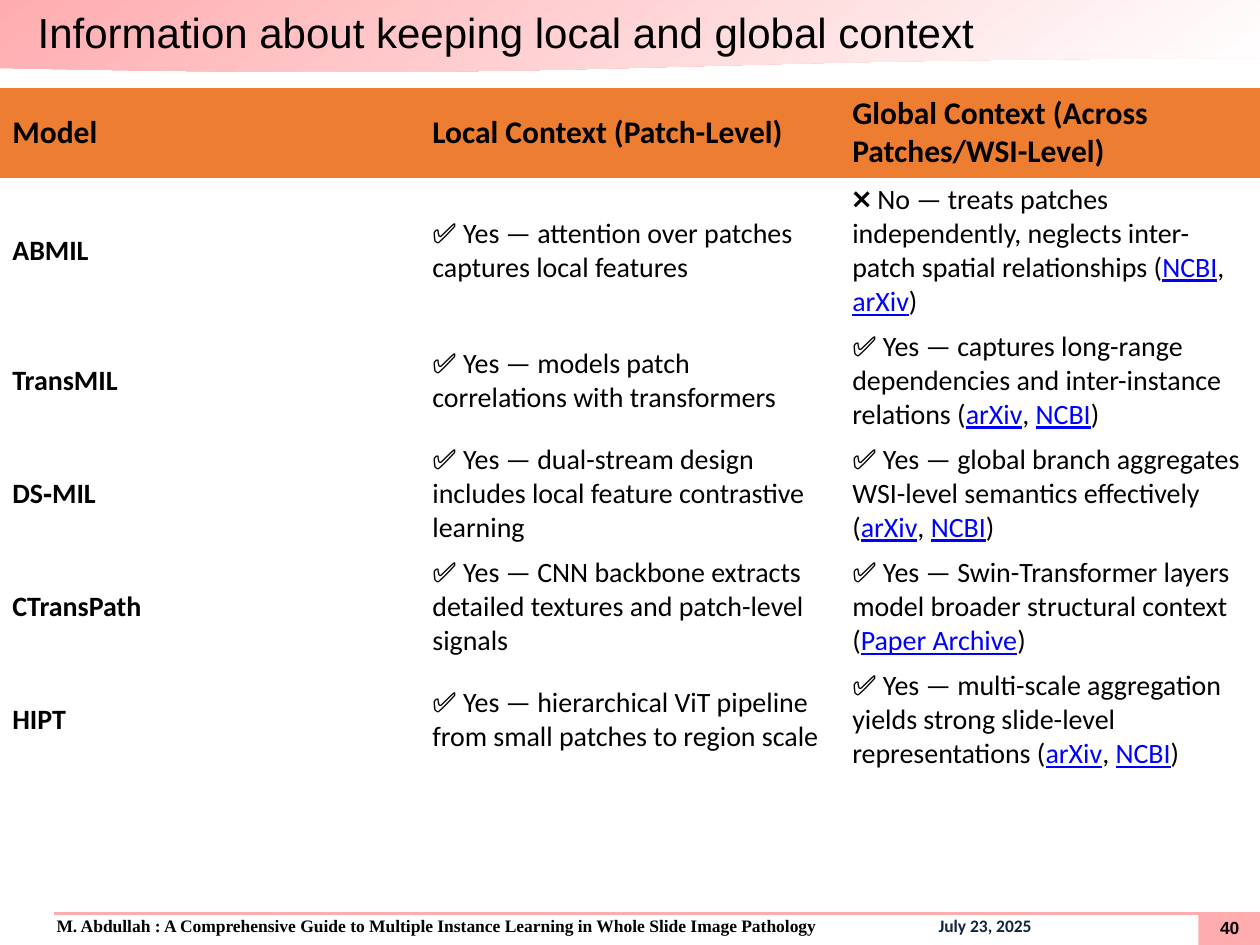
from dataclasses import dataclass

from lxml import etree
from pptx import Presentation
from pptx.dml.color import RGBColor
from pptx.enum.shapes import MSO_CONNECTOR, MSO_SHAPE
from pptx.enum.text import MSO_ANCHOR, MSO_AUTO_SIZE, PP_ALIGN
from pptx.oxml.ns import qn
from pptx.util import Cm, Pt

RECTANGLE = MSO_SHAPE.RECTANGLE
DOCUMENT = MSO_SHAPE.FLOWCHART_DOCUMENT
STRAIGHT = MSO_CONNECTOR.STRAIGHT
MIDDLE, TOP = MSO_ANCHOR.MIDDLE, MSO_ANCHOR.TOP
NO_FIT = MSO_AUTO_SIZE.NONE
LEFT, CENTER = PP_ALIGN.LEFT, PP_ALIGN.CENTER
TITLE_ONLY = 5
PLAIN_TABLE_STYLE = "{2D5ABB26-0587-4C30-8999-92F81FD0307C}"


@dataclass(frozen=True)
class Theme:
    black: str = "000000"
    white: str = "FFFFFF"
    pink: str = "FFACAF"
    orange: str = "ED7D31"
    link: str = "0000FF"
    navy: str = "0F243E"
    heading: str = "Arial"
    body: str = "Calibri"
    serif: str = "Times New Roman"
    title_size: int = 24
    header_size: int = 18
    cell_size: int = 16
    footer_size: int = 10


THEME = Theme()

TITLE = "Information about keeping local and global context"
AUTHOR_LINE = ("M. Abdullah : A Comprehensive Guide to Multiple Instance Learning "
               "in Whole Slide Image Pathology")
DATE = "July 23, 2025"
PAGE = "40"

HEADERS = ["Model", "Local Context (Patch-Level)",
           "Global Context (Across Patches/WSI-Level)"]
# Model, local context, global context, cited sources
MODELS = [
    ("ABMIL", "✅ Yes — attention over patches captures local features",
     "❌ No — treats patches independently, neglects inter-patch spatial relationships",
     ["NCBI", "arXiv"]),
    ("TransMIL", "✅ Yes — models patch correlations with transformers",
     "✅ Yes — captures long-range dependencies and inter-instance relations",
     ["arXiv", "NCBI"]),
    ("DS‑MIL", "✅ Yes — dual-stream design includes local feature contrastive learning",
     "✅ Yes — global branch aggregates WSI-level semantics effectively",
     ["arXiv", "NCBI"]),
    ("CTransPath", "✅ Yes — CNN backbone extracts detailed textures and patch-level signals",
     "✅ Yes — Swin-Transformer layers model broader structural context",
     ["Paper Archive"]),
    ("HIPT", "✅ Yes — hierarchical ViT pipeline from small patches to region scale",
     "✅ Yes — multi-scale aggregation yields strong slide-level representations",
     ["arXiv", "NCBI"]),
]
ROW_HEIGHTS = [1.8, 2.96] + [2.28] * 4


def set_all(target, values):
    for name, value in values.items():
        setattr(target, name, value)


def add_run(paragraph, text, color, **font_values):
    run = paragraph.add_run()
    run.text = text
    set_all(run.font, font_values)
    run.font.color.rgb = RGBColor.from_string(color)


def add_panel(slide, preset, left, top, width, height):
    panel = slide.shapes.add_shape(preset, Cm(left), Cm(top), Cm(width), Cm(height))
    panel.shadow.inherit = False
    panel.line.fill.background()
    return panel


def add_header(slide, left, top, width, height):
    # Gradient band with a wavy lower edge
    band = add_panel(slide, DOCUMENT, left, top, width, height)
    band.fill.gradient()
    band.fill.gradient_angle = 305
    for stop, color in zip(band.fill.gradient_stops, (THEME.pink, THEME.white)):
        stop.color.rgb = RGBColor.from_string(color)

    # Title, brought in front of the band
    title = slide.shapes.title
    slide.shapes._spTree.append(title._element)
    set_all(title, dict(left=Cm(left), top=Cm(top), width=Cm(width),
                        height=Cm(height - 0.2)))
    set_all(title.text_frame, dict(
        margin_left=Cm(0.76), margin_right=0, margin_top=0, margin_bottom=0,
        word_wrap=False, auto_size=NO_FIT, vertical_anchor=MIDDLE))
    heading = title.text_frame.paragraphs[0]
    heading.alignment = LEFT
    add_run(heading, TITLE, THEME.black, name=THEME.heading,
            size=Pt(THEME.title_size), bold=False)


def format_cell(cell, fill):
    set_all(cell, dict(vertical_anchor=MIDDLE, margin_left=Cm(0.25),
                       margin_right=Cm(0.25), margin_top=Cm(0.1),
                       margin_bottom=Cm(0.1)))
    if fill:
        cell.fill.solid()
        cell.fill.fore_color.rgb = RGBColor.from_string(fill)
    else:
        cell.fill.background()
    return cell.text_frame.paragraphs[0]


def add_sources(paragraph, sources, font):
    add_run(paragraph, " (", THEME.black, **font)
    for index, source in enumerate(sources):
        if index:
            add_run(paragraph, ", ", THEME.black, **font)
        add_run(paragraph, source, THEME.link, underline=True, **font)
    add_run(paragraph, ")", THEME.black, **font)


def add_model_table(slide, left, top, width):
    table = slide.shapes.add_table(
        len(MODELS) + 1, len(HEADERS), Cm(left), Cm(top), Cm(width),
        Cm(sum(ROW_HEIGHTS))).table
    set_all(table, dict(first_row=False, horz_banding=False))
    table._tbl.tblPr.find(qn("a:tableStyleId")).text = PLAIN_TABLE_STYLE
    for column in table.columns:
        column.width = Cm(width / len(HEADERS))
    for row, height in zip(table.rows, ROW_HEIGHTS):
        row.height = Cm(height)

    # Column headings
    for index, header in enumerate(HEADERS):
        paragraph = format_cell(table.cell(0, index), THEME.orange)
        add_run(paragraph, header, THEME.black, name=THEME.body,
                size=Pt(THEME.header_size), bold=True)

    # One row per model; the last cell ends with its sources
    font = dict(name=THEME.body, size=Pt(THEME.cell_size))
    for row, (*texts, sources) in enumerate(MODELS, start=1):
        for column, text in enumerate(texts):
            paragraph = format_cell(table.cell(row, column), None)
            add_run(paragraph, text, THEME.black, bold=column == 0, **font)
        add_sources(paragraph, sources, dict(font, bold=False))


def add_footer_text(slide, left, top, width, height, **frame_values):
    box = slide.shapes.add_textbox(Cm(left), Cm(top), Cm(width), Cm(height))
    set_all(box.text_frame, dict(word_wrap=True, **frame_values))
    return box.text_frame.paragraphs[0]


def add_footer(slide, left, top, width, height):
    # Page number block
    block_width = 1.27
    block_left = left + width - block_width + 0.03
    block = add_panel(slide, RECTANGLE, block_left, top, block_width, height)
    block.fill.solid()
    block.fill.fore_color.rgb = RGBColor.from_string(THEME.pink)

    # Author line and date, parted by a tab
    credit = add_footer_text(slide, left + 0.1, top - 0.03, width - 0.1, height,
                             margin_left=Cm(1.04), vertical_anchor=TOP)
    tabs = etree.SubElement(credit._p.get_or_add_pPr(), qn("a:tabLst"))
    etree.SubElement(tabs, qn("a:tab"), pos=str(Cm(17.78)), algn="l")
    credit.line_spacing = 0.95
    font = dict(size=Pt(THEME.footer_size), bold=True)
    add_run(credit, AUTHOR_LINE, THEME.black, name=THEME.serif, **font)
    add_run(credit, "\t" + DATE, THEME.navy, name=THEME.body, **font)

    # Rule above the footer
    rule = slide.shapes.add_connector(STRAIGHT, Cm(left + 1.09), Cm(top + 0.02),
                                      Cm(left + width), Cm(top + 0.02))
    rule.line.color.rgb = RGBColor.from_string(THEME.pink)
    rule.line.width = Pt(1.5)
    etree.SubElement(rule._element.spPr, qn("a:effectLst"))

    # Page number
    number = add_footer_text(slide, block_left + 0.12, top + 0.1, 1.02, 0.43,
                             margin_left=0, margin_right=0, margin_top=0,
                             margin_bottom=0, vertical_anchor=MIDDLE)
    number.alignment = CENTER
    add_run(number, PAGE, THEME.black, name=THEME.heading, **font)


def main():
    deck = Presentation()
    set_all(deck, dict(slide_width=Cm(25.4), slide_height=Cm(19.05)))
    slide = deck.slides.add_slide(deck.slide_layouts[TITLE_ONLY])
    add_header(slide, 0, 0, 25.4, 1.47)
    add_model_table(slide, 0, 1.78, 25.4)
    add_footer(slide, 0, 18.39, 25.4, 0.66)
    deck.save("out.pptx")


if __name__ == "__main__":
    main()
